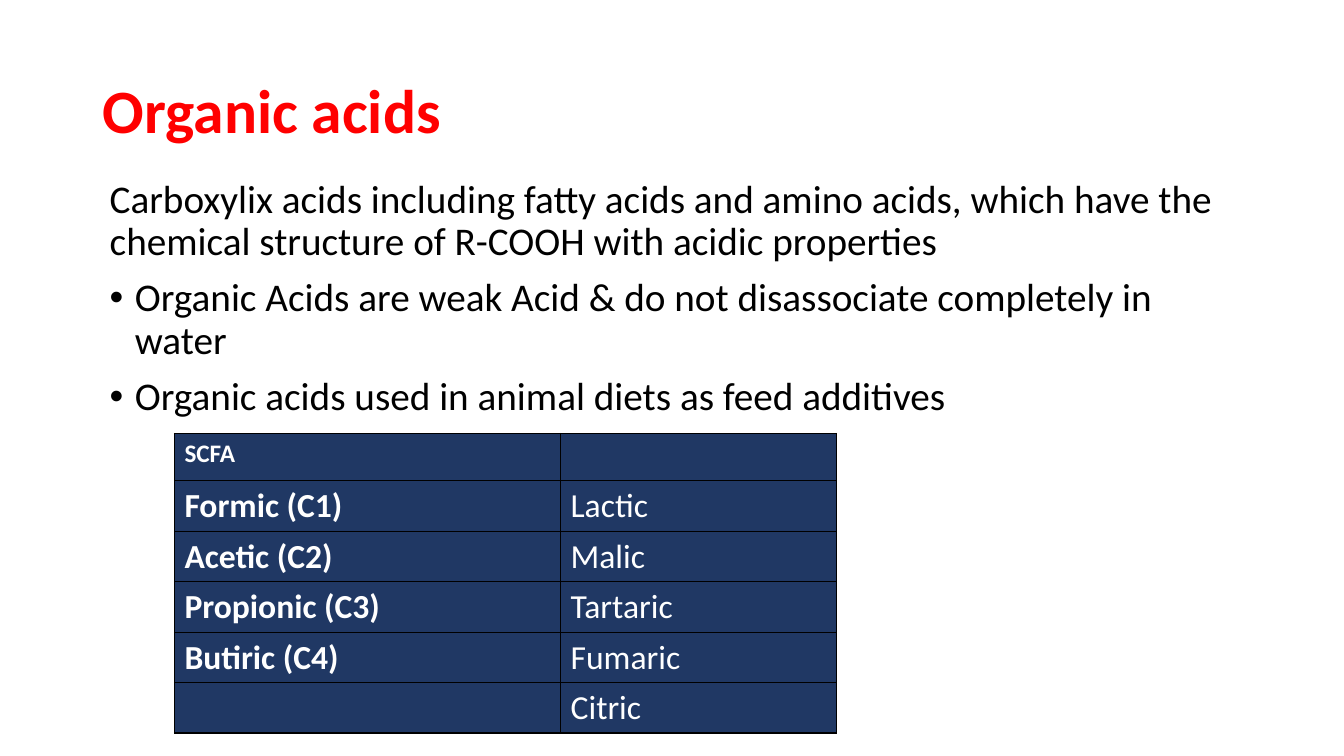
from dataclasses import dataclass

from lxml.etree import SubElement
from pptx import Presentation
from pptx.dml.color import RGBColor
from pptx.enum.text import MSO_ANCHOR as Anchor
from pptx.oxml.ns import qn
from pptx.slide import Slide
from pptx.table import _Cell as Cell
from pptx.text.text import _Paragraph as Paragraph
from pptx.util import Inches, Pt

FONT = "Calibri"
COLORS = {"title": "FF0000", "body": "000000", "cell": "203864",
          "cell_text": "FFFFFF", "border": "000000"}


@dataclass
class Line:
    text: str
    size: int
    color: str
    bold: bool = False
    bullet: bool = False


@dataclass
class TextBlock:
    left: float
    top: float
    width: float
    height: float
    anchor: Anchor
    lines: list[Line]


BLOCKS = [
    TextBlock(0.92, 0.4, 11.5, 1.45, Anchor.MIDDLE,
              [Line("Organic acids", 44, "title", bold=True)]),
    TextBlock(0.99, 1.73, 11.5, 5.14, Anchor.TOP, [
        Line("Carboxylix acids including fatty acids and amino acids, which have "
             "the chemical structure of R-COOH with acidic properties", 28, "body"),
        Line("Organic Acids are weak Acid & do not disassociate completely in water",
             28, "body", bullet=True),
        Line("Organic acids used in animal diets as feed additives",
             28, "body", bullet=True),
    ]),
]

ACIDS = [
    ("SCFA", ""),
    ("Formic (C1)", "Lactic"),
    ("Acetic (C2)", "Malic"),
    ("Propionic (C3)", "Tartaric"),
    ("Butiric (C4)", "Fumaric"),
    ("", "Citric"),
]
COLUMN_WIDTHS = [3.83, 2.74]
HEADER_HEIGHT, ROW_HEIGHT = 0.47, 0.5


def add_run(paragraph: Paragraph, line: Line) -> None:
    run = paragraph.add_run()
    run.text = line.text
    run.font.name = FONT
    run.font.size = Pt(line.size)
    run.font.bold = line.bold
    run.font.color.rgb = RGBColor.from_string(COLORS[line.color])


def add_bullet(paragraph: Paragraph) -> None:
    properties = paragraph._p.get_or_add_pPr()
    properties.set("marL", str(Inches(0.25)))
    properties.set("indent", str(-Inches(0.25)))
    SubElement(properties, qn("a:buFont"), typeface="Arial")
    SubElement(properties, qn("a:buChar"), char="•")


def add_text_block(slide: Slide, block: TextBlock) -> None:
    box = slide.shapes.add_textbox(Inches(block.left), Inches(block.top),
                                   Inches(block.width), Inches(block.height))
    frame = box.text_frame
    frame.word_wrap = True
    frame.vertical_anchor = block.anchor
    for index, line in enumerate(block.lines):
        paragraph = frame.add_paragraph() if index else frame.paragraphs[0]
        if line.bullet:
            add_bullet(paragraph)
        paragraph.line_spacing = 0.9
        if index:
            paragraph.space_before = Pt(10)
        add_run(paragraph, line)


def style_cell(cell: Cell) -> None:
    """Outline the cell on all four sides, then fill it."""
    properties = cell._tc.get_or_add_tcPr()
    for side in ("lnL", "lnR", "lnT", "lnB"):
        border = SubElement(properties, qn(f"a:{side}"), w=str(Pt(1)))
        fill = SubElement(border, qn("a:solidFill"))
        SubElement(fill, qn("a:srgbClr"), val=COLORS["border"])
    cell.fill.solid()
    cell.fill.fore_color.rgb = RGBColor.from_string(COLORS["cell"])


def add_acid_table(slide: Slide) -> None:
    heights = [HEADER_HEIGHT] + [ROW_HEIGHT] * (len(ACIDS) - 1)
    table = slide.shapes.add_table(
        len(ACIDS), len(COLUMN_WIDTHS), Inches(1.73), Inches(4.3),
        Inches(sum(COLUMN_WIDTHS)), Inches(sum(heights))).table
    for column, width in zip(table.columns, COLUMN_WIDTHS):
        column.width = Inches(width)
    for row_index, (acids, height) in enumerate(zip(ACIDS, heights)):
        table.rows[row_index].height = Inches(height)
        for column_index, acid in enumerate(acids):
            cell = table.cell(row_index, column_index)
            style_cell(cell)
            if acid:
                size = 24 if row_index else 18
                add_run(cell.text_frame.paragraphs[0],
                        Line(acid, size, "cell_text", bold=column_index == 0))


def main() -> None:
    presentation = Presentation()
    presentation.slide_width = Inches(13.33)
    presentation.slide_height = Inches(7.5)
    slide = presentation.slides.add_slide(presentation.slide_layouts[6])
    for block in BLOCKS:
        add_text_block(slide, block)
    add_acid_table(slide)
    presentation.save("out.pptx")


if __name__ == "__main__":
    main()
